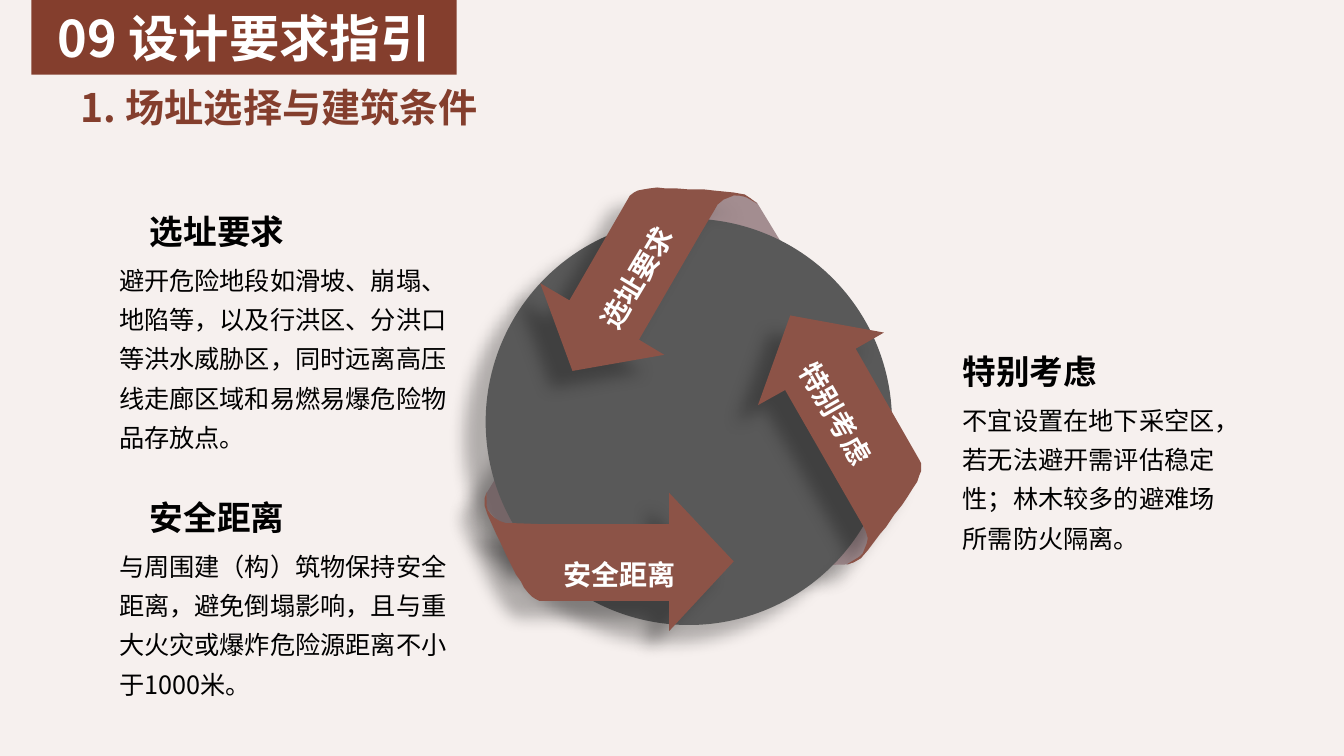
from lxml.etree import SubElement
from pptx import Presentation
from pptx.dml.color import RGBColor
from pptx.enum.shapes import MSO_SHAPE
from pptx.enum.text import MSO_ANCHOR, MSO_AUTO_SIZE, PP_ALIGN
from pptx.oxml.ns import qn
from pptx.util import Cm, Pt

FONT = "Noto Sans CJK SC"
BROWN = "843E2D"

deck = Presentation()
deck.slide_width, deck.slide_height = Cm(33.87), Cm(19.05)
page = deck.slides.add_slide(deck.slide_layouts[6])


def paint(shape, color, shadow=False):
    """Fill a shape without outline, with an optional soft shadow."""
    shape.fill.solid()
    shape.fill.fore_color.rgb = RGBColor.from_string(color)
    shape.line.fill.background()
    shape.shadow.inherit = False
    if shadow:
        effects = shape._element.spPr.find(qn("a:effectLst"))
        outer = SubElement(effects, qn("a:outerShdw"), blurRad=str(Pt(11.8)), dist=str(Pt(19.7)),
                           dir=str(141 * 60000), algn="ctr", rotWithShape="0")
        black = SubElement(outer, qn("a:srgbClr"), val="000000")
        SubElement(black, qn("a:alpha"), val="28000")


def write(box, text, size, color, bold=True, align=PP_ALIGN.LEFT, spacing=1.3):
    """Put one paragraph into a box and return it."""
    box.text_frame.word_wrap = True
    para = box.text_frame.paragraphs[0]
    para.text = text
    para.alignment, para.line_spacing = align, spacing
    para.font.size, para.font.bold, para.font.name = Pt(size), bold, FONT
    para.font.color.rgb = RGBColor.from_string(color)
    SubElement(para._p.pPr.find(qn("a:defRPr")), qn("a:ea"), typeface=FONT)
    return para


# Background
backdrop = page.shapes.add_shape(MSO_SHAPE.RECTANGLE, 0, 0, deck.slide_width, deck.slide_height)
paint(backdrop, "F6F0EE")

# Title banner
banner = page.shapes.add_shape(MSO_SHAPE.RECTANGLE, Cm(0.79), 0, Cm(10.72), Cm(1.88))
paint(banner, BROWN)
banner.text_frame.vertical_anchor = MSO_ANCHOR.MIDDLE
write(banner, "09 设计要求指引", 36, "FFFFFF", align=PP_ALIGN.CENTER, spacing=1.0)

# Subtitle
subtitle = page.shapes.add_textbox(Cm(0.79), Cm(2.18), Cm(26.26), Cm(1.24))
para = write(subtitle, "1. 场址选择与建筑条件", 28, BROWN, align=PP_ALIGN.JUSTIFY, spacing=Pt(28))
para.space_after = Pt(6)
para._p.pPr.set("marL", "0")
para._p.pPr.set("indent", str(Cm(1)))
subtitle.text_frame.auto_size = MSO_AUTO_SIZE.SHAPE_TO_FIT_TEXT

# Ribbon outlines, in hundredths of an inch
ribbon_backs = [
    [(625, 407), (530, 562), (482, 503), (483, 489), (556, 369)],
    [(696, 486), (887, 481), (855, 553), (842, 560), (694, 564)],
    [(759, 361), (661, 200), (738, 193), (751, 201), (826, 324)],
]
ribbon_arrows = [
    [(784, 313), (877, 330), (849, 346), (912, 456), (914, 460), (914, 467), (912, 472),
     (910, 478), (906, 484), (901, 492), (895, 501), (887, 511), (879, 523), (873, 530),
     (861, 546), (854, 554), (847, 558), (840, 560), (845, 557), (850, 554), (853, 552),
     (856, 549), (858, 544), (860, 539), (861, 534), (859, 527), (856, 521), (845, 502),
     (779, 387), (752, 402)],
    [(483, 488), (483, 502), (484, 506), (487, 510), (491, 514), (496, 517), (502, 519),
     (509, 519), (537, 520), (664, 520), (664, 489), (728, 557), (664, 626), (664, 596),
     (535, 596), (531, 594), (528, 592), (524, 588), (520, 583), (517, 577), (512, 570),
     (507, 560), (502, 550), (496, 537), (492, 529), (484, 511), (481, 502), (481, 494)],
    [(652, 186), (661, 187), (672, 187), (684, 188), (699, 188), (708, 189), (728, 191),
     (739, 193), (745, 197), (751, 202), (746, 199), (741, 196), (738, 195), (733, 194),
     (728, 194), (723, 196), (718, 198), (712, 203), (708, 210), (696, 230), (634, 337),
     (659, 352), (568, 368), (536, 281), (565, 298), (625, 194), (629, 191), (633, 189),
     (638, 188), (644, 187)],
]

# Ribbon backs, disc, then ribbon arrows on top
for outlines, color in ((ribbon_backs, "A38D90"), (ribbon_arrows, "8C5347")):
    for outline in outlines:
        builder = page.shapes.build_freeform(*outline[0], scale=Cm(0.0254))
        builder.add_line_segments(outline[1:], close=True)
        paint(builder.convert_to_shape(), color, shadow=True)
    if outlines is ribbon_backs:
        disc = page.shapes.add_shape(MSO_SHAPE.OVAL, Cm(12.24), Cm(5.51), Cm(10.24), Cm(10.24))
        paint(disc, "595959", shadow=True)

# Labels along the arrows: text, left, top, width, rotation
for text, left, top, width, turn in (
    ("选址要求", 13.97, 6.27, 3.86, 300.9),
    ("特别考虑", 19.43, 9.7, 3.58, 60.4),
    ("安全距离", 13.87, 13.67, 3.51, 0),
):
    label = page.shapes.add_textbox(Cm(left), Cm(top), Cm(width), Cm(1.27))
    label.rotation = turn
    write(label, text, 20, "FFFFFF", align=PP_ALIGN.CENTER)
    label.text_frame.auto_size = MSO_AUTO_SIZE.SHAPE_TO_FIT_TEXT

# Notes: heading, its left, top and width; body, its left, width and height
notes = [
    ("安全距离", 3.45, 12.06, 4.83,
     "与周围建（构）筑物保持安全距离，避免倒塌影响，且与重大火灾或爆炸危险源距离不小于1000米。",
     2.67, 9.17, 4.22),
    ("选址要求", 3.45, 4.85, 4.83,
     "避开危险地段如滑坡、崩塌、地陷等，以及行洪区、分洪口等洪水威胁区，同时远离高压线走廊区域和易燃易爆危险物品存放点。",
     2.67, 9.17, 5.23),
    ("特别考虑", 23.93, 8.38, 6.83,
     "不宜设置在地下采空区，若无法避开需评估稳定性；林木较多的避难场所需防火隔离。",
     23.93, 7.29, 4.22),
]
for heading, head_left, top, head_width, body, body_left, body_width, body_height in notes:
    for text, left, y, width, height, size, bold in (
        (body, body_left, top + 1.45, body_width, body_height, 18, False),
        (heading, head_left, top, head_width, 1.55, 24, True),
    ):
        box = page.shapes.add_textbox(Cm(left), Cm(y), Cm(width), Cm(height))
        frame = box.text_frame
        frame.margin_left = frame.margin_right = Cm(0.33)
        frame.margin_top = frame.margin_bottom = Cm(0.15)
        write(box, text, size, "000000", bold)
        frame.auto_size = MSO_AUTO_SIZE.SHAPE_TO_FIT_TEXT

deck.save("out.pptx")
